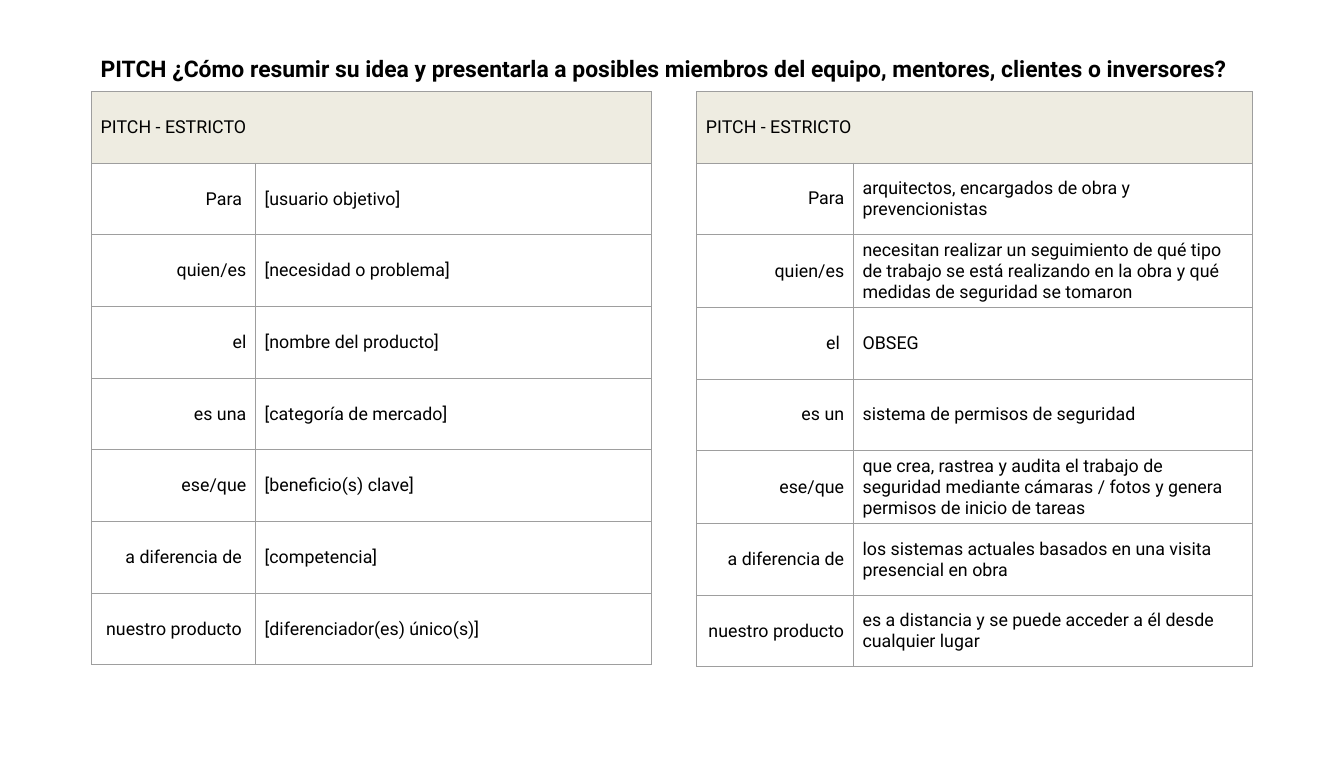
from lxml import etree
from pptx import Presentation
from pptx.dml.color import RGBColor
from pptx.enum.text import MSO_ANCHOR, PP_ALIGN
from pptx.oxml.ns import qn
from pptx.util import Pt

LEFT, RIGHT = PP_ALIGN.LEFT, PP_ALIGN.RIGHT
MIDDLE, BOTTOM = MSO_ANCHOR.MIDDLE, MSO_ANCHOR.BOTTOM

COLORS = {"text": "000000", "header": "EEECE1", "border": "9E9E9E"}
FONT = "Roboto"
TABLE_TOP = 72

TITLE = ("PITCH ¿Cómo resumir su idea y presentarla a posibles miembros "
         "del equipo, mentores, clientes o inversores?")
HEADER = "PITCH - ESTRICTO"
TEMPLATE = [
    ("Para ", "[usuario objetivo]"),
    ("quien/es", "[necesidad o problema]"),
    ("el", "[nombre del producto]"),
    ("es una", "[categoría de mercado]"),
    ("ese/que", "[beneficio(s) clave]"),
    ("a diferencia de ", "[competencia]"),
    ("nuestro producto ", "[diferenciador(es) único(s)]"),
]
EXAMPLE = [
    ("Para", "arquitectos, encargados de obra y prevencionistas"),
    ("quien/es", "necesitan realizar un seguimiento de qué tipo de trabajo se "
                 "está realizando en la obra y qué medidas de seguridad se tomaron"),
    ("el ", "OBSEG"),
    ("es un", "sistema de permisos de seguridad"),
    ("ese/que", "que crea, rastrea y audita el trabajo de seguridad mediante "
                "cámaras / fotos y genera permisos de inicio de tareas"),
    ("a diferencia de", "los sistemas actuales basados en una visita presencial en obra"),
    ("nuestro producto ", "es a distancia y se puede acceder a él desde cualquier lugar"),
]
TEMPLATE_HEIGHTS = [56.4] * 8
EXAMPLE_HEIGHTS = [56.2, 56.2, 57.4, 56.2, 56.2, 57.4, 56.2, 56.2]


def rgb(name):
    return RGBColor.from_string(COLORS[name])


def write(tf, text, size, align=LEFT, bold=False):
    p = tf.paragraphs[0]
    p.text = text
    p.alignment = align
    for r in p.runs:
        r.font.name = FONT
        r.font.size = Pt(size)
        r.font.bold = bold
        r.font.color.rgb = rgb("text")


def add_title(s):
    tf = s.shapes.add_textbox(Pt(72), Pt(10), Pt(913), Pt(58.4)).text_frame
    tf.word_wrap = True
    tf.vertical_anchor = BOTTOM
    write(tf, TITLE, 18, bold=True)


def add_borders(cell):
    tcPr = cell._tc.get_or_add_tcPr()
    for side in ("a:lnL", "a:lnR", "a:lnT", "a:lnB"):
        ln = etree.SubElement(tcPr, qn(side), w=str(Pt(0.75)))
        fill = etree.SubElement(ln, qn("a:solidFill"))
        etree.SubElement(fill, qn("a:srgbClr"), val=COLORS["border"])


def format_cell(cell, fill=None):
    cell.vertical_anchor = MIDDLE
    add_borders(cell)
    if fill:
        cell.fill.solid()
        cell.fill.fore_color.rgb = rgb(fill)
    else:
        cell.fill.background()


def add_pitch_table(s, left, widths, heights, rows):
    """Add a merged header row above right-aligned labels and their answers."""
    frame = s.shapes.add_table(len(heights), 2, Pt(left), Pt(TABLE_TOP),
                               Pt(sum(widths)), Pt(sum(heights)))
    table = frame.table
    table.first_row = False
    table.horz_banding = False
    for column, width in zip(table.columns, widths):
        column.width = Pt(width)
    for row, height in zip(table.rows, heights):
        row.height = Pt(height)

    for col in range(2):
        format_cell(table.cell(0, col), "header")
    table.cell(0, 0).merge(table.cell(0, 1))
    write(table.cell(0, 0).text_frame, HEADER, 14)

    for i, texts in enumerate(rows, 1):
        for col, (text, align) in enumerate(zip(texts, (RIGHT, LEFT))):
            cell = table.cell(i, col)
            format_cell(cell)
            write(cell.text_frame, text, 14, align)


def main():
    prs = Presentation()
    prs.slide_width, prs.slide_height = Pt(1057), Pt(595.5)
    s = prs.slides.add_slide(prs.slide_layouts[6])
    add_pitch_table(s, 72, (129, 311.4), TEMPLATE_HEIGHTS, TEMPLATE)
    add_title(s)
    add_pitch_table(s, 548, (123.2, 314), EXAMPLE_HEIGHTS, EXAMPLE)
    prs.save("out.pptx")


if __name__ == "__main__":
    main()
